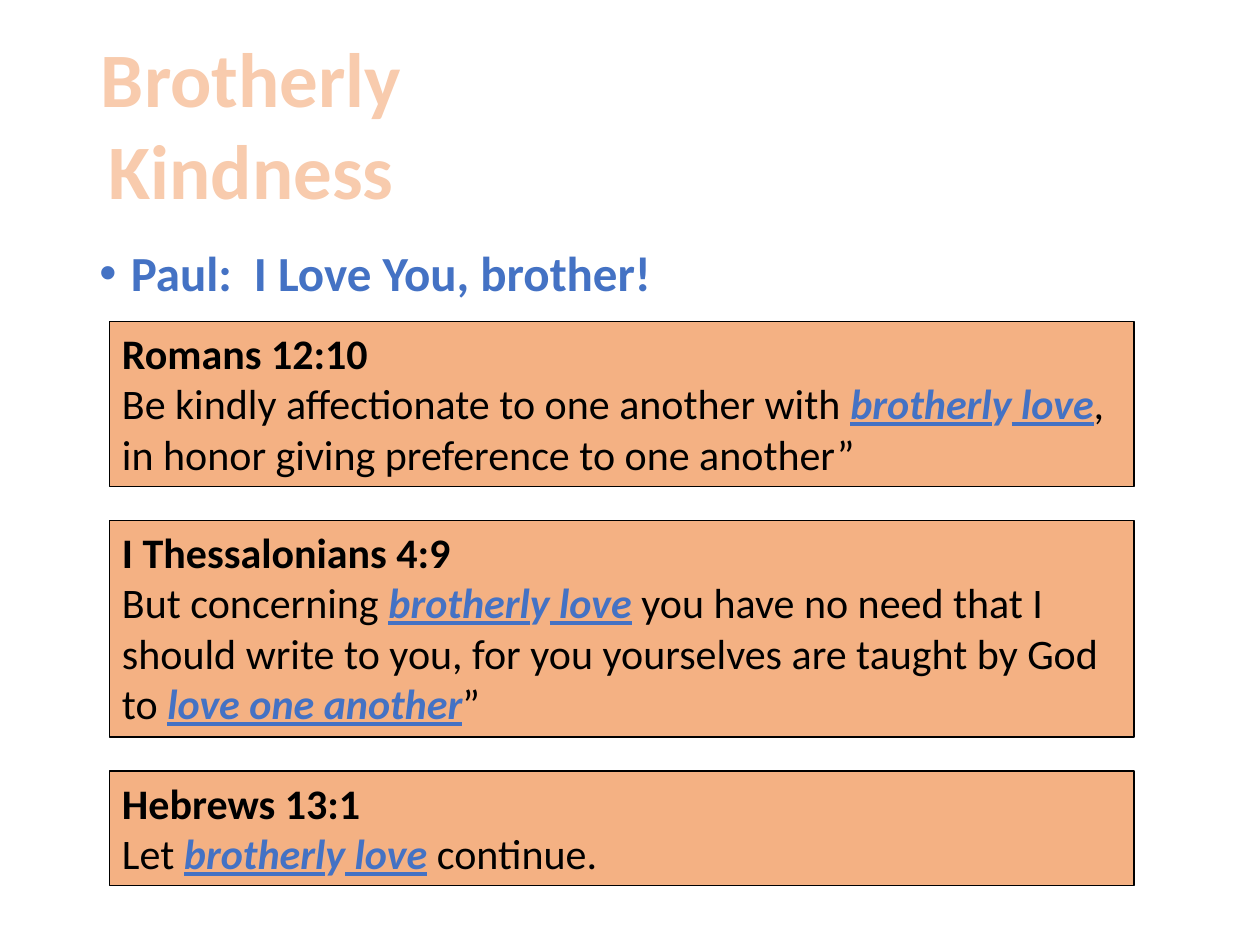
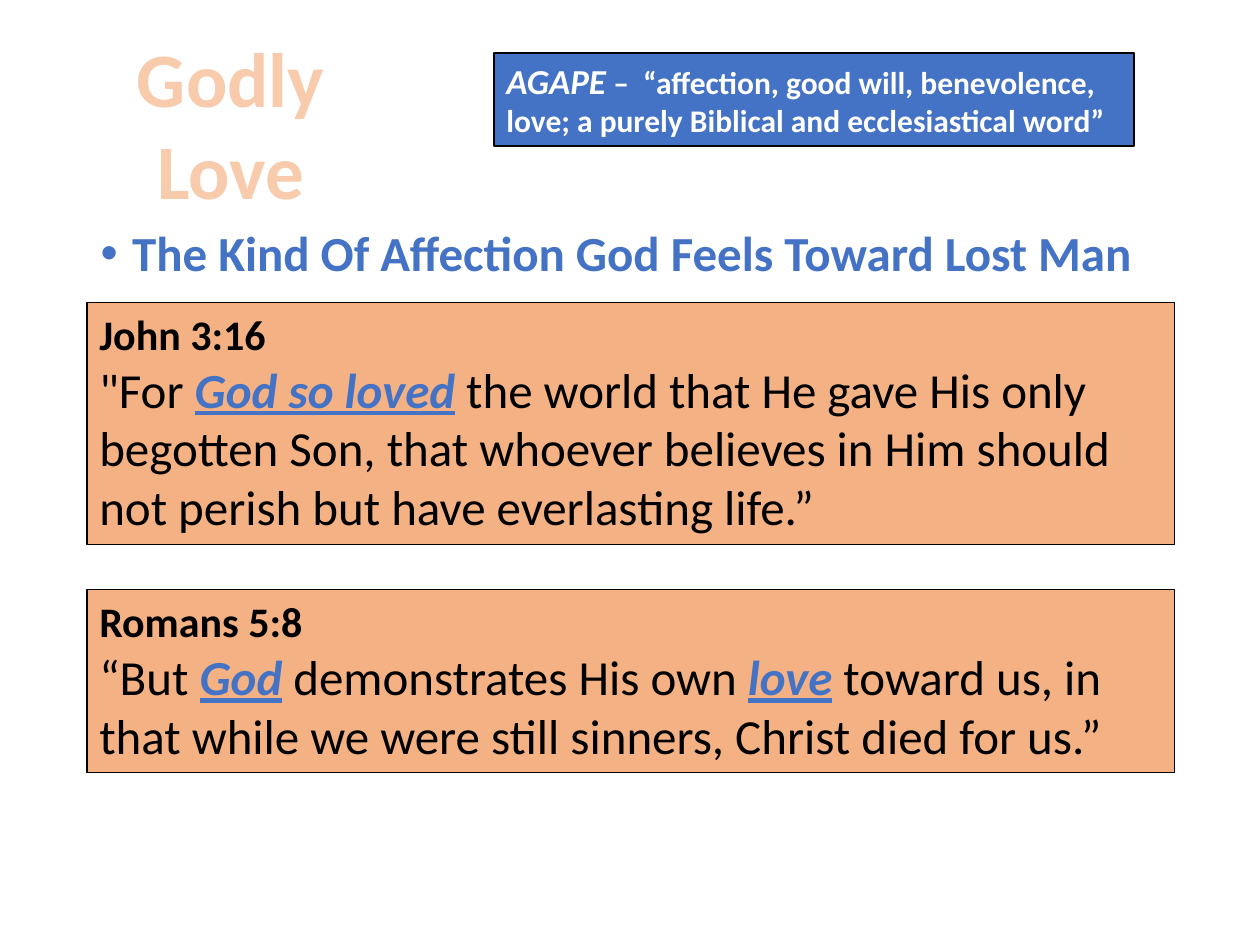
from dataclasses import dataclass, replace
from typing import NamedTuple

from lxml.etree import SubElement
from pptx import Presentation
from pptx.dml.color import RGBColor
from pptx.enum.shapes import MSO_SHAPE
from pptx.enum.text import MSO_ANCHOR, MSO_AUTO_SIZE, PP_ALIGN
from pptx.oxml import parse_xml
from pptx.oxml.ns import nsdecls, qn
from pptx.util import Inches, Pt


# Theme: colours, font and type sizes
@dataclass(frozen=True)
class Theme:
    font: str = "Calibri"
    ink: str = "000000"
    white: str = "FFFFFF"
    blue: str = "4472C4"
    peach: str = "F4B183"
    pale: str = "F8CBAD"
    orange: str = "ED7D31"
    title: int = 44
    large: int = 28
    verse: int = 24
    term: int = 20
    small: int = 18
    edge: float = 0.75
    rim: float = 1.75


THEME = Theme()


@dataclass(frozen=True)
class Look:
    size: int
    color: str = THEME.ink
    bold: bool = False
    slant: bool = False
    under: bool = False


class Span(NamedTuple):
    text: str
    look: Look


class Box(NamedTuple):
    left: float
    top: float
    width: float
    height: float


class Verse(NamedTuple):
    name: str
    spans: list[Span]
    height: float


class Stack(NamedTuple):
    left: float
    top: float
    width: float
    gap: float
    verses: list[Verse]


Lines = list[list[Span]]

# Text looks
TITLE = Look(THEME.title, THEME.pale, bold=True)
POINT = Look(THEME.large, THEME.blue, bold=True)
HEAD = Look(THEME.verse, bold=True)
PLAIN = Look(THEME.verse)
MARK = Look(THEME.verse, THEME.blue, bold=True, slant=True, under=True)
BIG = replace(PLAIN, size=THEME.large)
BIG_MARK = replace(MARK, size=THEME.large)
TERM = Look(THEME.term, THEME.white, bold=True, slant=True)
SENSE = Look(THEME.small, THEME.white, bold=True)

# The underline skips the tail of the "y"
LOVE = [Span("brotherl", MARK), Span("y", replace(MARK, under=False)),
        Span(" love", MARK)]


def place(box: Box) -> list:
    return [Inches(x) for x in box]


def add_run(para, text: str, look: Look):
    run = para.add_run()
    run.text = text
    font = run.font
    font.name, font.size = THEME.font, Pt(look.size)
    font.bold, font.italic, font.underline = look.bold, look.slant, look.under
    font.color.rgb = RGBColor.from_string(look.color)
    return run


def write(frame, lines: Lines) -> None:
    for i, spans in enumerate(lines):
        para = frame.paragraphs[0] if i == 0 else frame.add_paragraph()
        para.alignment = PP_ALIGN.LEFT
        for span in spans:
            for j, part in enumerate(span.text.split("\n")):
                if j:
                    para.add_line_break()
                add_run(para, part, span.look)


def add_title(slide, box: Box, lines: Lines, wrap: bool) -> None:
    frame = slide.shapes.add_textbox(*place(box)).text_frame
    write(frame, lines)
    frame.word_wrap = wrap
    frame.auto_size = MSO_AUTO_SIZE.SHAPE_TO_FIT_TEXT
    for para in frame.paragraphs:
        para.alignment = PP_ALIGN.CENTER
        for run in para.runs:
            rim = parse_xml(
                f'<a:ln {nsdecls("a")} w="{Pt(THEME.rim)}"><a:solidFill>'
                f'<a:srgbClr val="{THEME.orange}"/></a:solidFill></a:ln>')
            run.font._element.insert(0, rim)


def add_point(slide, box: Box, text: str) -> None:
    frame = slide.shapes.add_textbox(*place(box)).text_frame
    frame.word_wrap = True
    write(frame, [[Span(text, POINT)]])
    para = frame.paragraphs[0]
    para.line_spacing, para.space_before = 0.9, Pt(10)
    props = para._p.get_or_add_pPr()
    props.set("marL", str(Inches(0.25)))
    props.set("indent", str(-Inches(0.25)))
    SubElement(props, qn("a:buFont"), typeface="Arial")
    SubElement(props, qn("a:buChar"), char="•")


def add_panel(slide, box: Box, fill: str, lines: Lines) -> None:
    shape = slide.shapes.add_shape(MSO_SHAPE.RECTANGLE, *place(box))
    shape.shadow.inherit = False
    shape.fill.solid()
    shape.fill.fore_color.rgb = RGBColor.from_string(fill)
    shape.line.color.rgb = RGBColor.from_string(THEME.ink)
    shape.line.width = Pt(THEME.edge)
    frame = shape.text_frame
    frame.word_wrap = True
    frame.vertical_anchor = MSO_ANCHOR.TOP
    frame.auto_size = MSO_AUTO_SIZE.SHAPE_TO_FIT_TEXT
    write(frame, lines)


def add_stack(slide, stack: Stack) -> None:
    top = stack.top
    for verse in stack.verses:
        box = Box(stack.left, top, stack.width, verse.height)
        add_panel(slide, box, THEME.peach,
                  [[Span(verse.name, HEAD)], verse.spans])
        top += verse.height + stack.gap


# Verses of each slide
KIND = Stack(0.87, 2.55, 8.13, 0.27, [
    Verse("Romans 12:10", [
        Span("Be kindly affectionate to one another with ", PLAIN), *LOVE,
        Span(", in honor giving preference to one another”", PLAIN)], 1.31),
    Verse("I Thessalonians 4:9", [
        Span("But concerning ", PLAIN), *LOVE,
        Span(" you have no need that I should write to you, for you "
             "yourselves are taught by God to ", PLAIN),
        Span("love one another", MARK), Span("”", PLAIN)], 1.72),
    Verse("Hebrews 13:1", [
        Span("Let ", PLAIN), *LOVE, Span(" continue.", PLAIN)], 0.91),
])
GODLY = Stack(0.69, 2.4, 8.63, 0.36, [
    Verse("John 3:16", [
        Span('"For ', BIG), Span("God so loved", BIG_MARK),
        Span(" the world that He gave His only begotten Son, that whoever "
             "believes in Him should not perish but have everlasting life.”",
             BIG)], 1.92),
    Verse("Romans 5:8", [
        Span("“But ", BIG), Span("God", BIG_MARK),
        Span(" demonstrates His own ", BIG), Span("love", BIG_MARK),
        Span(" toward us, in that while we were still sinners, Christ died "
             "for us.”", BIG)], 1.45),
])


def main() -> None:
    deck = Presentation()
    deck.slide_width, deck.slide_height = Inches(10), Inches(7.5)
    blank = deck.slide_layouts[6]

    # Brotherly kindness
    slide = deck.slides.add_slide(blank)
    add_title(slide, Box(0.69, 0.19, 2.61, 1.58),
              [[Span("Brotherly", TITLE)], [Span("Kindness", TITLE)]], False)
    add_point(slide, Box(0.69, 1.93, 8.62, 4.76), "Paul:  I Love You, brother!")
    add_stack(slide, KIND)

    # Godly love
    slide = deck.slides.add_slide(blank)
    add_title(slide, Box(0.82, 0.19, 2.02, 1.58),
              [[Span("Godly\nLove", TITLE)]], True)
    add_panel(slide, Box(3.92, 0.42, 5.08, 0.74), THEME.blue, [[
        Span("AGAPE", TERM),
        Span(" –  “affection, good will, benevolence, love; a purely Biblical "
             "and ecclesiastical word”", SENSE)]])
    add_point(slide, Box(0.7, 1.77, 8.62, 4.76),
              "The Kind Of Affection God Feels Toward Lost Man")
    add_stack(slide, GODLY)

    deck.save("out.pptx")


if __name__ == "__main__":
    main()
